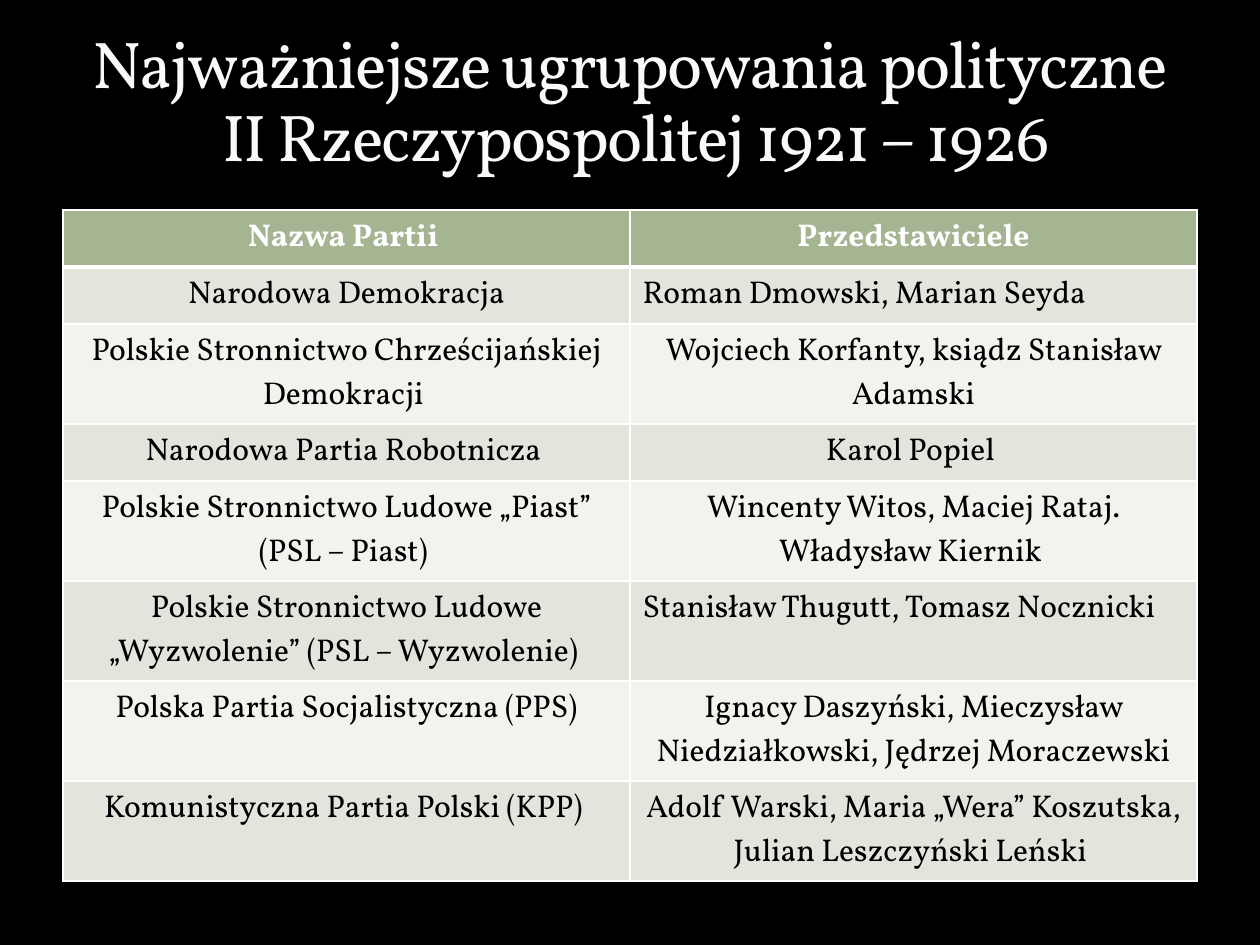
from lxml import etree
from pptx import Presentation
from pptx import util as u
from pptx.dml.color import RGBColor
from pptx.enum import text
from pptx.oxml.ns import qn

SCALE = 914400 / 126
FONT = "Vollkorn"
BLACK = RGBColor(0x00, 0x00, 0x00)
WHITE = RGBColor(0xFF, 0xFF, 0xFF)
PALE = RGBColor(0xF9, 0xF9, 0xF9)
GREEN = RGBColor(0xA5, 0xB5, 0x92)
BANDS = (RGBColor(0xF0, 0xF3, 0xEE), RGBColor(0xE1, 0xE5, 0xDC))
CENTER = text.PP_ALIGN.CENTER
LEFT = text.PP_ALIGN.LEFT

TITLE = "Najważniejsze ugrupowania polityczne\v II Rzeczypospolitej 1921 – 1926"
SHORT, TALL = 57, 100
ROWS = [
    (SHORT, "Nazwa Partii ", "Przedstawiciele", CENTER),
    (SHORT, "Narodowa Demokracja", "Roman Dmowski, Marian Seyda", LEFT),
    (TALL, "Polskie Stronnictwo Chrześcijańskiej Demokracji ",
     "Wojciech Korfanty, ksiądz Stanisław Adamski", CENTER),
    (SHORT, "Narodowa Partia Robotnicza ", "Karol Popiel ", CENTER),
    (TALL, "Polskie Stronnictwo Ludowe „Piast” (PSL – Piast) ",
     "Wincenty Witos, Maciej Rataj. Władysław Kiernik ", CENTER),
    (TALL, "Polskie Stronnictwo Ludowe „Wyzwolenie” (PSL – Wyzwolenie) ",
     "Stanisław Thugutt, Tomasz Nocznicki", LEFT),
    (TALL, "Polska Partia Socjalistyczna (PPS)",
     "Ignacy Daszyński, Mieczysław Niedziałkowski, Jędrzej Moraczewski", CENTER),
    (TALL, "Komunistyczna Partia Polski (KPP) ",
     "Adolf Warski, Maria „Wera” Koszutska, Julian Leszczyński Leński ", CENTER),
]


def px(n):
    return u.Emu(round(n * SCALE))


def style(para, size, color, align, bold=False):
    para.alignment = align
    for run in para.runs:
        font = run.font
        font.name, font.size, font.bold = FONT, u.Pt(size), bold
        font.color.rgb = color


def add_title(slide):
    frame = slide.shapes.add_textbox(px(63), px(21), px(1134), px(168)).text_frame
    frame.word_wrap = True
    frame.vertical_anchor = text.MSO_ANCHOR.TOP
    frame.margin_top = px(9)
    para = frame.paragraphs[0]
    para.text = TITLE
    para.line_spacing = 0.92
    style(para, 37.8, PALE, CENTER)
    for run in para.runs:
        run._r.get_or_add_rPr().set("spc", "-100")


def add_edges(cell, top, bottom):
    props = cell._tc.get_or_add_tcPr()
    widths = {"a:lnL": 1, "a:lnR": 1, "a:lnT": top, "a:lnB": bottom}
    for spot, (tag, width) in enumerate(widths.items()):
        line = etree.Element(qn(tag), w=str(u.Pt(width)))
        fill = etree.SubElement(line, qn("a:solidFill"))
        etree.SubElement(fill, qn("a:srgbClr"), val=str(WHITE))
        props.insert(spot, line)


def fill_cell(cell, words, row, align):
    head = row == 0
    cell.fill.solid()
    cell.fill.fore_color.rgb = GREEN if head else BANDS[row % 2]
    para = cell.text_frame.paragraphs[0]
    para.text = words
    style(para, 18, WHITE if head else BLACK, align, head)
    add_edges(cell, 3 if row == 1 else 1, 3 if head else 1)


def add_parties(slide):
    total = sum(row[0] for row in ROWS)
    table = slide.shapes.add_table(
        len(ROWS), 2, px(63), px(210), px(1134), px(total)).table
    for col in table.columns:
        col.width = px(567)
    for i, (height, party, people, align) in enumerate(ROWS):
        table.rows[i].height = px(height)
        fill_cell(table.cell(i, 0), party, i, CENTER)
        fill_cell(table.cell(i, 1), people, i, align)


def main():
    deck = Presentation()
    deck.slide_width, deck.slide_height = px(1260), px(945)
    slide = deck.slides.add_slide(deck.slide_layouts[6])
    back = slide.background.fill
    back.solid()
    back.fore_color.rgb = BLACK
    add_title(slide)
    add_parties(slide)
    deck.save("out.pptx")


if __name__ == "__main__":
    main()
